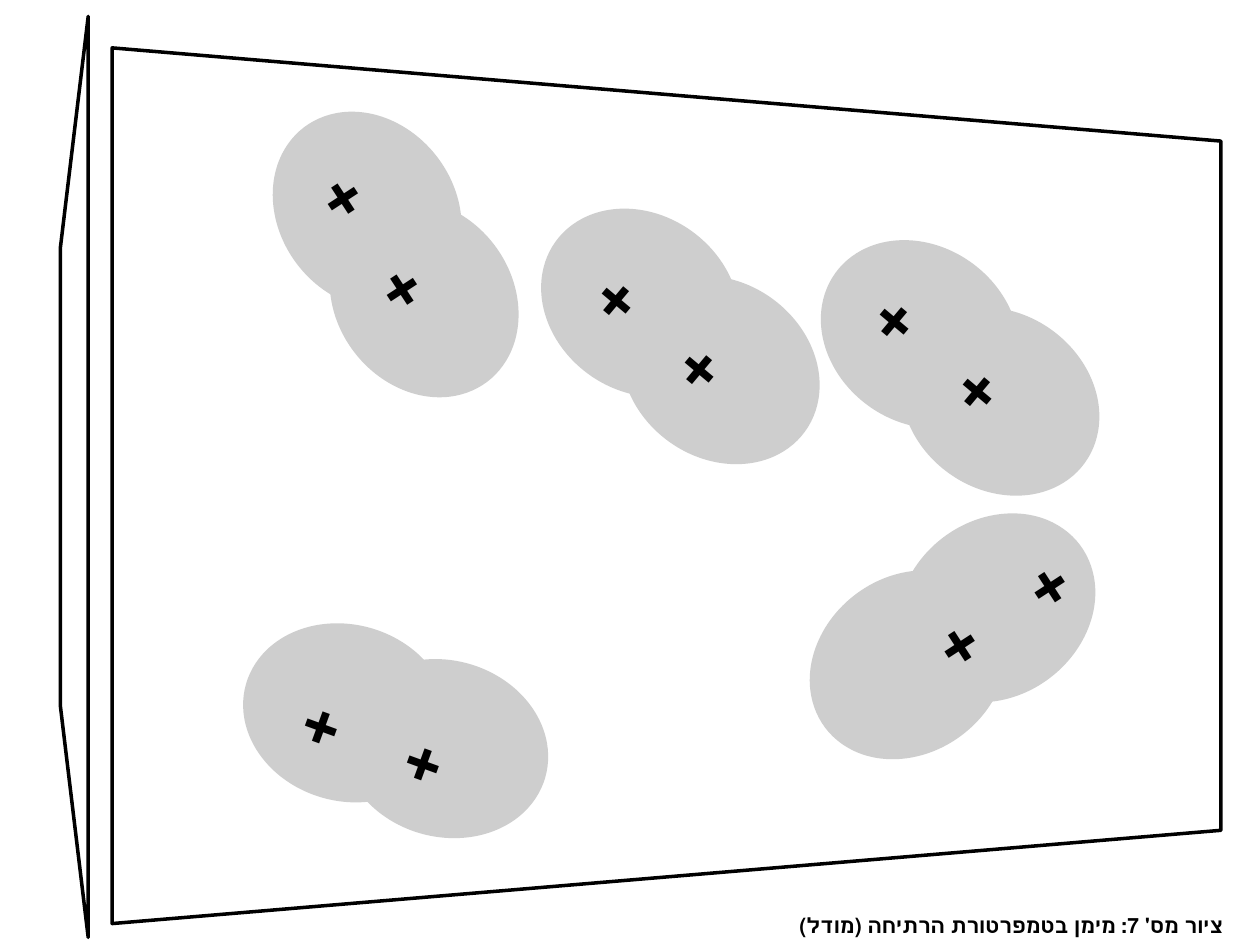
import math
import pptx
import pptx.util
import pptx.dml.color
import pptx.enum.shapes
import pptx.enum.text
import pptx.oxml

Inches = pptx.util.Inches
Pt = pptx.util.Pt
OVAL = pptx.enum.shapes.MSO_SHAPE.OVAL

COLORS = {"ink": "000000", "cloud": "CECECE"}
FONT = "Times New Roman"
CAPTION = "ציור מס' 7: מימן בטמפרטורת הרתיחה (מודל)"

# Box faces: corners in inches
FACES = [
    [(0.89, 0.38), (9.69, 1.12), (9.69, 6.59), (0.89, 7.33)],
    [(0.7, 0.13), (0.48, 1.96), (0.48, 5.61), (0.7, 7.44)],
]
# Molecules: centre, axis angle, centre of the text with the nuclei
MOLECULES = [
    ((3.14, 2.02), 57, (2.97, 1.8)),
    ((5.4, 2.67), 40, (5.19, 2.53)),
    ((7.62, 2.92), 40, (7.4, 2.7)),
    ((7.56, 5.05), -33, (7.84, 4.89)),
    ((3.14, 5.8), 20, (2.88, 5.81)),
]
ATOM = (1.66, 1.4)
BOND = 0.83      # between the centres of two atoms
TILT = 4         # atoms lag behind the axis by this angle
LABEL = (1.66, 0.7)
GAP = 1.16       # between the two nuclei


def color(name):
    return pptx.dml.color.RGBColor.from_string(COLORS[name])


def frame(mid, size):
    """Left, top, width, height of a part centred on mid."""
    (x, y), (w, h) = mid, size
    return [Inches(v) for v in (x - w / 2, y - h / 2, w, h)]


def add_face(shapes, points):
    first, *rest = [(Inches(x), Inches(y)) for x, y in points]
    pen = shapes.build_freeform(*first)
    pen.add_line_segments(rest, close=True)
    face = pen.convert_to_shape()
    face.shadow.inherit = False
    face.fill.background()
    face.line.color.rgb = color("ink")
    face.line.width = Pt(2)


def add_atom(shapes, mid, angle):
    atom = shapes.add_shape(OVAL, *frame(mid, ATOM))
    atom.rotation = angle
    atom.shadow.inherit = False
    atom.fill.solid()
    atom.fill.fore_color.rgb = color("cloud")
    atom.line.fill.background()


def add_text(shapes, box, text, size):
    """Right-to-left text, set from the right edge."""
    label = shapes.add_textbox(*box)
    label.text_frame.word_wrap = True
    para = label.text_frame.paragraphs[0]
    para.alignment = pptx.enum.text.PP_ALIGN.RIGHT
    para._p.get_or_add_pPr().set("rtl", "1")
    run = para.add_run()
    run.text = text
    run.font.name = FONT
    run.font.size = Pt(size)
    run.font.bold = True
    run.font.color.rgb = color("ink")
    return label, para


def add_nuclei(shapes, mid, angle):
    label, para = add_text(shapes, frame(mid, LABEL), "+\t+", 37)
    label.rotation = angle
    text = label.text_frame
    text.margin_left, text.margin_right = Inches(0), Inches(0.14)
    text.margin_top = text.margin_bottom = Inches(0.04)
    # One tab stop sets the gap
    tabs = pptx.oxml.parse_xml(
        '<a:tabLst xmlns:a="http://schemas.openxmlformats.org/drawingml/2006/main">'
        f'<a:tab pos="{Inches(GAP)}" algn="l"/></a:tabLst>')
    para._p.get_or_add_pPr().append(tabs)


def main():
    deck = pptx.Presentation()
    deck.slide_width, deck.slide_height = Inches(10), Inches(7.5)
    shapes = deck.slides.add_slide(deck.slide_layouts[6]).shapes

    for face in FACES:
        add_face(shapes, face)

    # Two atoms along each axis, nuclei on top
    for (x, y), angle, spot in MOLECULES:
        turn = math.radians(angle)
        for side in (-0.5, 0.5):
            step = side * BOND
            mid = (x + step * math.cos(turn), y + step * math.sin(turn))
            add_atom(shapes, mid, angle - TILT)
        add_nuclei(shapes, spot, angle)

    # Caption
    box = [Inches(v) for v in (5.87, 7.19, 3.94, 0.3)]
    add_text(shapes, box, CAPTION, 12)

    deck.save("out.pptx")


if __name__ == "__main__":
    main()
